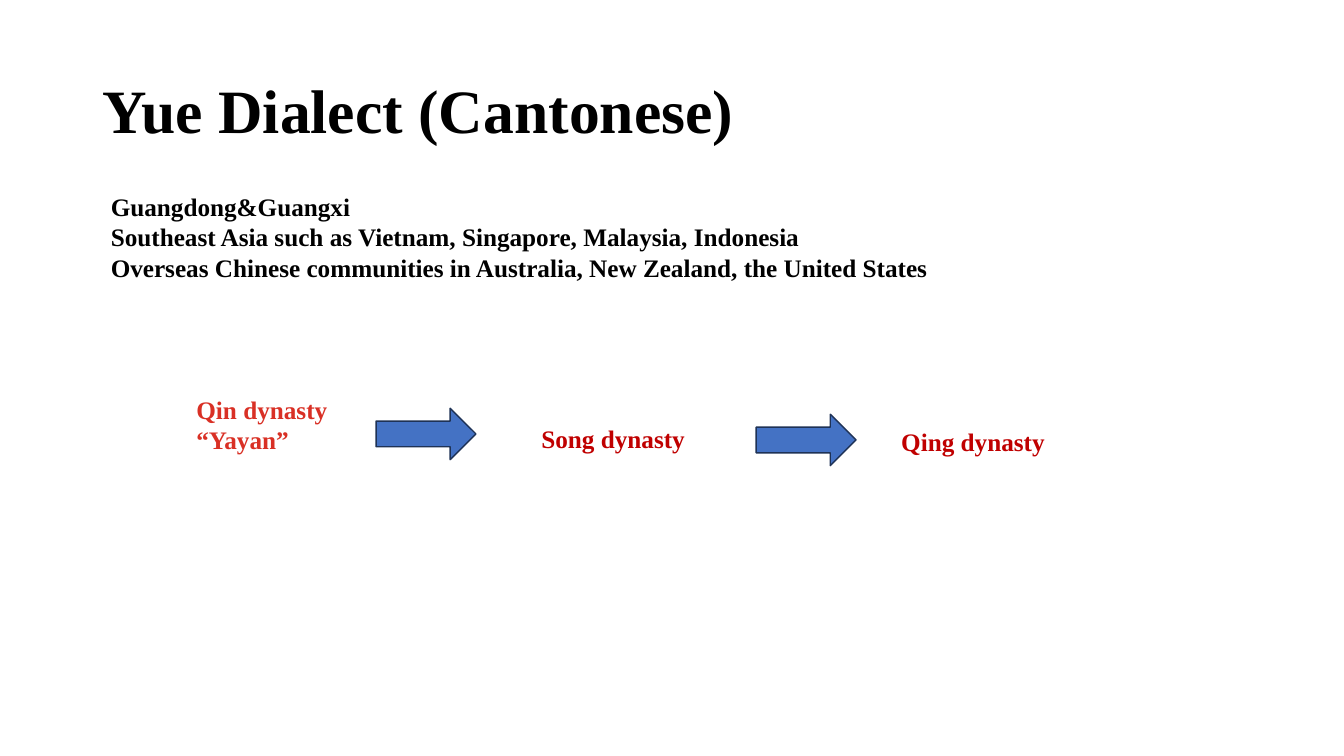
"""Build a slide on the Yue dialect with a timeline of dynasties."""
from pptx import Presentation
from pptx.dml.color import RGBColor
from pptx.enum.shapes import MSO_SHAPE
from pptx.enum.text import MSO_ANCHOR
from pptx.util import Inches, Pt

RIGHT_ARROW = MSO_SHAPE.RIGHT_ARROW
TOP = MSO_ANCHOR.TOP
MIDDLE = MSO_ANCHOR.MIDDLE
COLORS = {
    "text": "000000",
    "origin": "D93025",
    "dynasty": "C00000",
    "arrow": "4472C4",
    "outline": "1E3256",
}
REGIONS = [
    "Guangdong&Guangxi",
    "Southeast Asia such as Vietnam, Singapore, Malaysia, Indonesia",
    "Overseas Chinese communities in Australia, New Zealand, the United States",
]
DYNASTIES = [
    ((1.85, 3.86, 1.74, 0.71), ["Qin dynasty", "“Yayan”"], "origin"),
    ((5.27, 4.15, 1.69, 0.4), ["Song dynasty"], "dynasty"),
    ((8.84, 4.18, 1.69, 0.4), ["Qing dynasty"], "dynasty"),
]
ARROWS = [(3.73, 4.05), (7.5, 4.11)]


def color(name):
    """Return the named colour."""
    return RGBColor.from_string(COLORS[name])


def add_text(page, place, lines, color_name="text", size=18, anchor=TOP, spacing=1.0):
    """Add a text box with one bold paragraph for each line."""
    box = page.shapes.add_textbox(*map(Inches, place))
    frame = box.text_frame
    frame.word_wrap = True
    frame.vertical_anchor = anchor
    frame.text = "\n".join(lines)
    font_format = {"name": "Times New Roman", "size": Pt(size), "bold": True}
    for para in frame.paragraphs:
        para.line_spacing = spacing
        for span in para.runs:
            for key, value in font_format.items():
                setattr(span.font, key, value)
            span.font.color.rgb = color(color_name)


def add_arrow(page, left, top):
    """Add a block arrow pointing to the next dynasty."""
    arrow = page.shapes.add_shape(
        RIGHT_ARROW, Inches(left), Inches(top), Inches(0.99), Inches(0.51)
    )
    arrow.shadow.inherit = False
    arrow.fill.solid()
    arrow.fill.fore_color.rgb = color("arrow")
    arrow.line.color.rgb = color("outline")
    arrow.line.width = Pt(1)


def main():
    """Build and save the deck."""
    deck = Presentation()
    deck.slide_width = Inches(13.33)
    deck.slide_height = Inches(7.5)
    page = deck.slides.add_slide(deck.slide_layouts[6])
    add_text(page, (0.92, 0.4, 11.5, 1.45), ["Yue Dialect (Cantonese)"],
             size=44, anchor=MIDDLE, spacing=0.9)
    add_text(page, (1, 1.85, 9.52, 1.01), REGIONS)
    for place, lines, color_name in DYNASTIES:
        add_text(page, place, lines, color_name)
    for left, top in ARROWS:
        add_arrow(page, left, top)
    deck.save("out.pptx")


if __name__ == "__main__":
    main()
